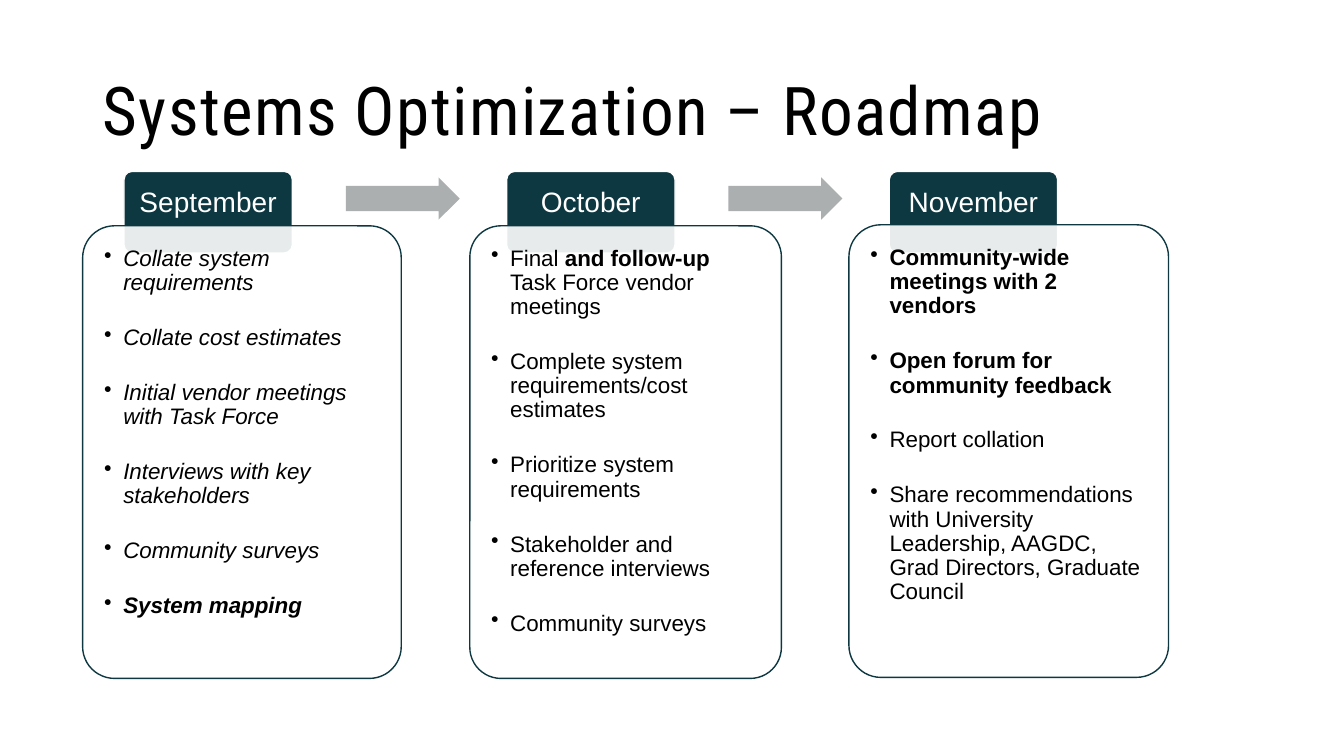
from dataclasses import dataclass

from lxml.etree import SubElement
from pptx import Presentation
from pptx.dml.color import RGBColor
from pptx.enum.shapes import MSO_SHAPE
from pptx.enum.text import MSO_ANCHOR, PP_ALIGN
from pptx.oxml.ns import qn
from pptx.util import Inches, Pt

TEAL = "0D3841"
GRAY = "ABAFB0"
WHITE = "FFFFFF"
BLACK = "000000"
STEP = 3.795
TAB_TOP = 1.7


@dataclass
class Run:
    text: str
    bold: bool = False
    slant: bool = False


@dataclass
class Month:
    name: str
    left: float
    top: float
    width: float
    items: list[list[Run]]


MONTHS = [
    Month("September", 0.82, 2.24, 3.16, [
        [Run("Collate system requirements", slant=True)],
        [Run("Collate cost estimates", slant=True)],
        [Run("Initial vendor meetings with Task Force", slant=True)],
        [Run("Interviews with key stakeholders", slant=True)],
        [Run("Community surveys", slant=True)],
        [Run("System mapping", bold=True, slant=True)],
    ]),
    Month("October", 4.66, 2.24, 3.09, [
        [Run("Final "), Run("and follow-up ", bold=True),
         Run("Task Force vendor meetings")],
        [Run("Complete system requirements/cost estimates")],
        [Run("Prioritize system requirements")],
        [Run("Stakeholder and reference interviews")],
        [Run("Community surveys")],
    ]),
    Month("November", 8.42, 2.23, 3.17, [
        [Run("Community-wide meetings with 2 vendors", bold=True)],
        [Run("Open forum for community feedback", bold=True)],
        [Run("Report collation")],
        [Run("Share recommendations with University Leadership, AAGDC, "
             "Grad Directors, Graduate Council")],
    ]),
]


def paint(color: str) -> RGBColor:
    return RGBColor.from_string(color)


def write(shape, items: list[list[Run]], *, size: float, color: str = BLACK,
          face: str = "Arial", align=PP_ALIGN.LEFT, anchor=MSO_ANCHOR.TOP,
          inset: tuple[float, float] = (0.1, 0.05), wrap: bool = True,
          bullet: bool = False, gap: float = 0, track: int = 0) -> None:
    frame = shape.text_frame
    frame.word_wrap = wrap
    frame.vertical_anchor = anchor
    frame.margin_left = frame.margin_right = Inches(inset[0])
    frame.margin_top = frame.margin_bottom = Inches(inset[1])
    for index, runs in enumerate(items):
        para = frame.add_paragraph() if index else frame.paragraphs[0]
        if bullet:
            props = para._p.get_or_add_pPr()
            props.set("marL", str(Inches(0.19)))
            props.set("indent", str(-Inches(0.19)))
            SubElement(props, qn("a:buChar")).set("char", "•")
        para.alignment = align
        para.line_spacing = 0.9
        para.space_after = Pt(gap)
        for part in runs:
            run = para.add_run()
            run.text = part.text
            font = run.font
            font.name, font.size = face, Pt(size)
            font.bold, font.italic = part.bold, part.slant
            font.color.rgb = paint(color)
            if track:
                font._element.set("spc", str(track))


def draw(slide, kind, left: float, top: float, width: float, height: float,
         *, fill: str, line: str = "", turns: tuple[float, ...] = (0.1,),
         alpha: int = 100):
    shape = slide.shapes.add_shape(
        kind, Inches(left), Inches(top), Inches(width), Inches(height))
    shape.shadow.inherit = False
    for index, turn in enumerate(turns):
        shape.adjustments[index] = turn
    shape.fill.solid()
    shape.fill.fore_color.rgb = paint(fill)
    if alpha < 100:
        tint = shape._element.spPr.find(f".//{qn('a:srgbClr')}")
        SubElement(tint, qn("a:alpha")).set("val", str(alpha * 1000))
    if line:
        shape.line.color.rgb = paint(line)
        shape.line.width = Pt(1)
    else:
        shape.line.fill.background()
    return shape


def add_month(slide, month: Month, index: int) -> None:
    tab = draw(slide, MSO_SHAPE.ROUNDED_RECTANGLE, 1.23 + index * STEP,
               TAB_TOP, 1.67, 0.81, fill=TEAL, line=WHITE)
    write(tab, [[Run(month.name)]], size=20, color=WHITE,
          align=PP_ALIGN.CENTER, inset=(0.14, 0.14), wrap=False)
    card = draw(slide, MSO_SHAPE.ROUNDED_RECTANGLE, month.left, month.top,
                month.width, 4.49, fill=WHITE, line=TEAL, alpha=90)
    write(card, month.items, size=16, inset=(0.12, 0.12), bullet=True, gap=22)
    if index < len(MONTHS) - 1:
        draw(slide, MSO_SHAPE.RIGHT_ARROW, 3.43 + index * STEP, 1.76, 1.13,
             0.42, fill=GRAY, turns=(0.6, 0.5))


def main() -> None:
    deck = Presentation()
    deck.slide_width, deck.slide_height = Inches(13.33), Inches(7.5)
    slide = deck.slides.add_slide(deck.slide_layouts[6])
    title = slide.shapes.add_textbox(
        Inches(0.92), Inches(0.4), Inches(12.02), Inches(1.45))
    write(title, [[Run("Systems Optimization – Roadmap")]], size=48,
          face="Roboto Condensed", anchor=MSO_ANCHOR.MIDDLE, track=100)
    for index, month in enumerate(MONTHS):
        add_month(slide, month, index)
    deck.save("out.pptx")


if __name__ == "__main__":
    main()
